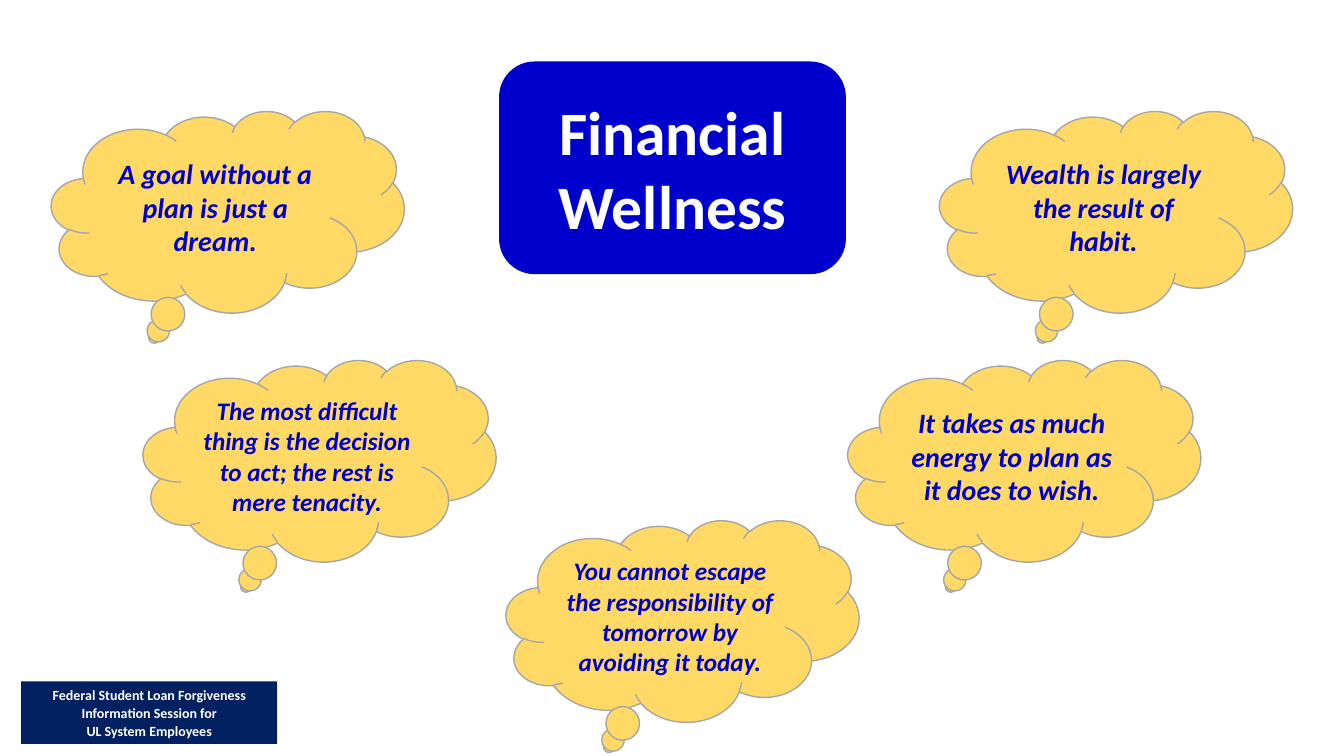
from dataclasses import dataclass
from typing import Optional

from pptx import Presentation, util as u
from pptx.dml.color import RGBColor
from pptx.enum import shapes, text

PX = u.Inches(1) // 100


@dataclass(frozen=True)
class Theme:
    font: str = "Calibri"
    white: str = "FFFFFF"
    navy: str = "002060"
    blue: str = "0000CC"
    gold: str = "FFD966"
    grey: str = "A6A6A6"
    title_size: int = 44
    quote_size: int = 20
    long_quote_size: int = 18
    footer_size: int = 10
    outline: int = 1


THEME = Theme()


@dataclass(frozen=True)
class Style:
    kind: shapes.MSO_SHAPE
    width: int
    height: int
    fill: str
    color: str
    line: Optional[str] = None
    italic: bool = False


@dataclass(frozen=True)
class Label:
    words: str
    left: int
    top: int
    size: int


FOOTER_STYLE = Style(shapes.MSO_SHAPE.RECTANGLE, 254, 62, THEME.navy, THEME.white)
TITLE_STYLE = Style(shapes.MSO_SHAPE.ROUNDED_RECTANGLE, 344, 211, THEME.blue, THEME.white)
CLOUD_STYLE = Style(shapes.MSO_SHAPE.CLOUD_CALLOUT, 350, 200, THEME.gold, THEME.blue,
                    line=THEME.grey, italic=True)

FOOTER = Label("Federal Student Loan Forgiveness Information Session for\vUL System Employees",
               21, 676, THEME.footer_size)
TITLE = Label("Financial Wellness", 495, 61, THEME.title_size)
QUOTES = (
    Label("A goal without a plan is just a dream.", 51, 110, THEME.quote_size),
    Label("The most difficult thing is the decision to act; the rest is mere tenacity.",
          142, 357, THEME.long_quote_size),
    Label("Wealth is largely the result of habit.", 932, 110, THEME.quote_size),
    Label("It takes as much energy to plan as it does to wish.", 841, 357, THEME.quote_size),
    Label("You cannot escape the responsibility of tomorrow by avoiding it today.",
          502, 516, THEME.long_quote_size),
)


def add_label(page, label: Label, style: Style):
    box = page.shapes.add_shape(style.kind, label.left * PX, label.top * PX,
                                style.width * PX, style.height * PX)
    box.shadow.inherit = False
    box.fill.solid()
    box.fill.fore_color.rgb = RGBColor.from_string(style.fill)
    if style.line:
        box.line.color.rgb = RGBColor.from_string(style.line)
        box.line.width = u.Pt(THEME.outline)
    else:
        box.line.fill.background()

    frame = box.text_frame
    frame.word_wrap = True
    frame.vertical_anchor = text.MSO_ANCHOR.MIDDLE
    para = frame.paragraphs[0]
    para.text = label.words
    para.alignment = text.PP_ALIGN.CENTER
    para.font.name = THEME.font
    para.font.size = u.Pt(label.size)
    para.font.bold = True
    para.font.italic = style.italic
    para.font.color.rgb = RGBColor.from_string(style.color)
    return para


def main() -> None:
    deck = Presentation()
    deck.slide_width = u.Inches(13.33)
    deck.slide_height = u.Inches(7.5)
    page = deck.slides.add_slide(deck.slide_layouts[6])

    footer = add_label(page, FOOTER, FOOTER_STYLE)
    footer.line_spacing = 1.07
    footer.space_after = u.Pt(8)
    add_label(page, TITLE, TITLE_STYLE)
    for quote in QUOTES:
        add_label(page, quote, CLOUD_STYLE)

    deck.save("out.pptx")


if __name__ == "__main__":
    main()
